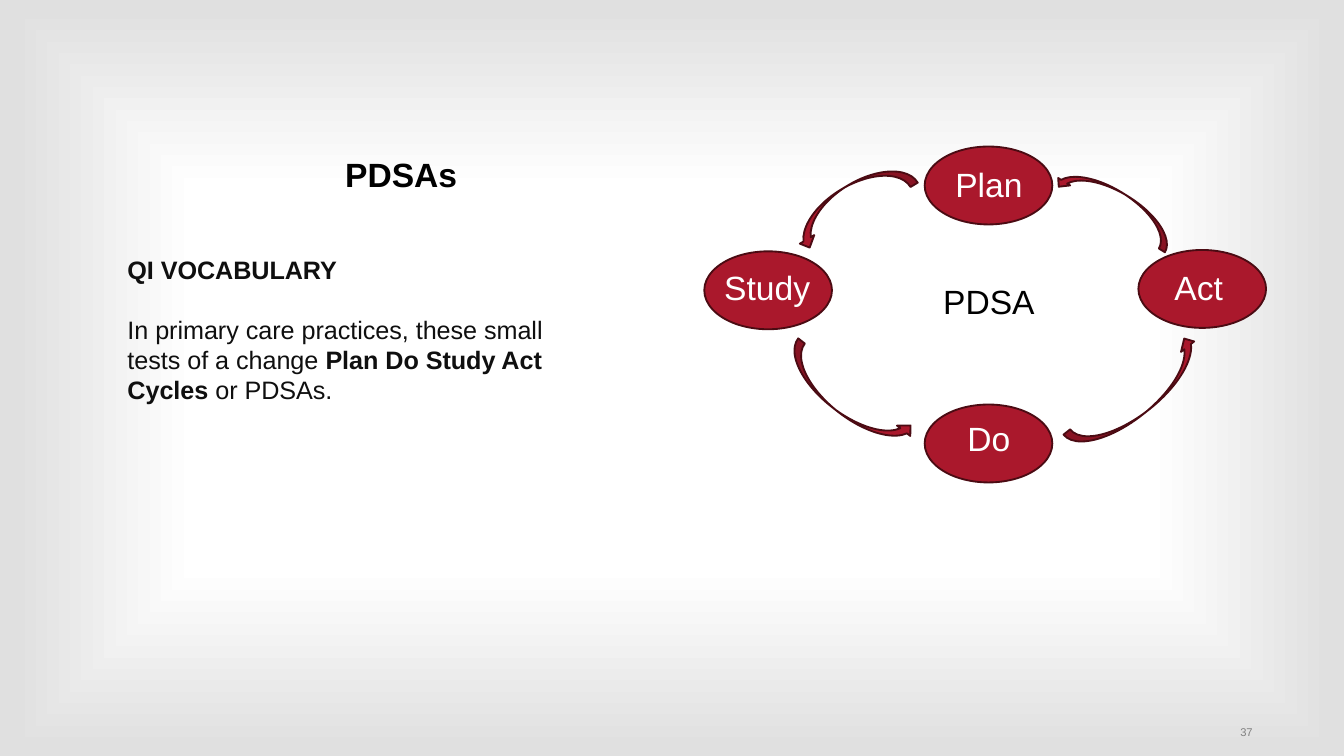
from pptx import Presentation
from pptx.dml.color import RGBColor
from pptx.enum.shapes import MSO_SHAPE as Preset
from pptx.enum.text import MSO_ANCHOR as Anchor, PP_ALIGN as Align
from pptx.oxml import parse_xml
from pptx.oxml.ns import nsdecls
from pptx.util import Inches, Pt

RED, DARK_RED = "AA182C", "4B0B13"
WHITE, BLACK, INK, GRAY = "FFFFFF", "000000", "0F0F0F", "808080"
SLIDE_WIDTH = 10
NODE_WIDTH, NODE_HEIGHT = 0.95, 0.58
LABEL_HEIGHT = 0.4

# name, ellipse left and top, label left, top and width
NODES = [
    ("Plan", 1.68, 0.09, 1.81, 0.17, 0.71),
    ("Study", 0.04, 0.87, 0.09, 0.94, 0.85),
    ("Do", 1.68, 2.01, 1.9, 2.06, 0.71),
    ("Act", 3.27, 0.86, 3.44, 0.94, 0.71),
]
# left, top, width, height, rotation
ARROWS = [
    (1.01, 0.01, 0.25, 1, 59),
    (0.98, 1.4, 0.25, 1.12, 307.8),
    (3.14, 1.35, 0.25, 1.21, 231.5),
    (3, 0.04, 0.21, 0.98, 121.7),
]


def color(value):
    return RGBColor.from_string(value)


def inches(*lengths):
    return [Inches(length) for length in lengths]


def set_background(slide):
    """Fill the slide with a gradient from a white centre to gray edges."""
    stops = "".join(
        f'<a:gs pos="{position}000"><a:srgbClr val="{value}"/></a:gs>'
        for position, value in [(12, WHITE), (50, WHITE), (98, "E0E0E0")]
    )
    gradient = parse_xml(
        f'<a:gradFill {nsdecls("a")} rotWithShape="1"><a:gsLst>{stops}</a:gsLst>'
        '<a:path path="shape"><a:fillToRect l="50000" t="50000" r="50000" b="50000"/>'
        "</a:path></a:gradFill>"
    )
    slide.background.fill.solid()
    properties = slide.background._cSld.bg.bgPr
    properties.replace(properties[0], gradient)


def add_runs(paragraph, runs, size, text_color):
    for text, bold in runs:
        run = paragraph.add_run()
        run.text = text
        font_format = {"name": "Arial", "size": Pt(size), "bold": bold}
        for name, value in font_format.items():
            setattr(run.font, name, value)
        run.font.color.rgb = color(text_color)


def add_text(slide, box, paragraphs, size=18, text_color=BLACK, wrap=True,
             paragraph_format=None, anchor=Anchor.TOP):
    """Add a text box; each paragraph is a list of (text, bold) runs."""
    frame = slide.shapes.add_textbox(*inches(*box)).text_frame
    frame.word_wrap = wrap
    frame.vertical_anchor = anchor
    for index, runs in enumerate(paragraphs):
        paragraph = frame.add_paragraph() if index else frame.paragraphs[0]
        for name, value in (paragraph_format or {}).items():
            if index or name != "space_before":
                setattr(paragraph, name, value)
        add_runs(paragraph, runs, size, text_color)


def add_red_shape(slide, preset, box, rotation=0):
    shape = slide.shapes.add_shape(preset, *inches(*box))
    shape.rotation = rotation
    shape.shadow.inherit = False
    shape.fill.solid()
    shape.fill.fore_color.rgb = color(RED)
    shape.line.color.rgb = color(DARK_RED)
    shape.line.width = Pt(1)


def add_vocabulary(slide, left, top):
    add_text(slide, (left + 1.62, top, 1.04, LABEL_HEIGHT), [[("PDSAs", True)]], wrap=False)
    add_text(
        slide, (left, top + 0.74, 3.68, 1.24),
        [
            [("QI VOCABULARY", True)],
            [
                ("In primary care practices, these small tests of a change ", False),
                ("Plan Do Study Act Cycles ", True),
                ("or PDSAs.", False),
            ],
        ],
        size=13.5, text_color=INK,
        paragraph_format={"space_before": Pt(16)},
    )


def add_cycle(slide, left, top):
    for _, x, y, *_ in NODES:
        add_red_shape(slide, Preset.OVAL, (left + x, top + y, NODE_WIDTH, NODE_HEIGHT))
    add_text(slide, (left + 1.72, top + 1.04, 1.17, LABEL_HEIGHT), [[("PDSA", False)]])
    for name, _, _, x, y, width in NODES:
        add_text(slide, (left + x, top + y, width, LABEL_HEIGHT), [[(name, False)]],
                 text_color=WHITE)
    for x, y, width, height, rotation in ARROWS:
        add_red_shape(slide, Preset.CURVED_RIGHT_ARROW,
                      (left + x, top + y, width, height), rotation)


def add_slide_number(slide, box):
    add_text(slide, box, [[("37", False)]], size=6, text_color=GRAY,
             paragraph_format={"alignment": Align.CENTER}, anchor=Anchor.MIDDLE)


def main():
    presentation = Presentation()
    presentation.slide_width, presentation.slide_height = inches(
        SLIDE_WIDTH, SLIDE_WIDTH * 9 / 16)
    slide = presentation.slides.add_slide(presentation.slide_layouts[6])
    set_background(slide)
    add_slide_number(slide, (8.91, 5.35, 0.73, 0.2))
    add_vocabulary(slide, 0.85, 1.1)
    add_cycle(slide, 5.2, 1)
    presentation.save("out.pptx")


if __name__ == "__main__":
    main()
